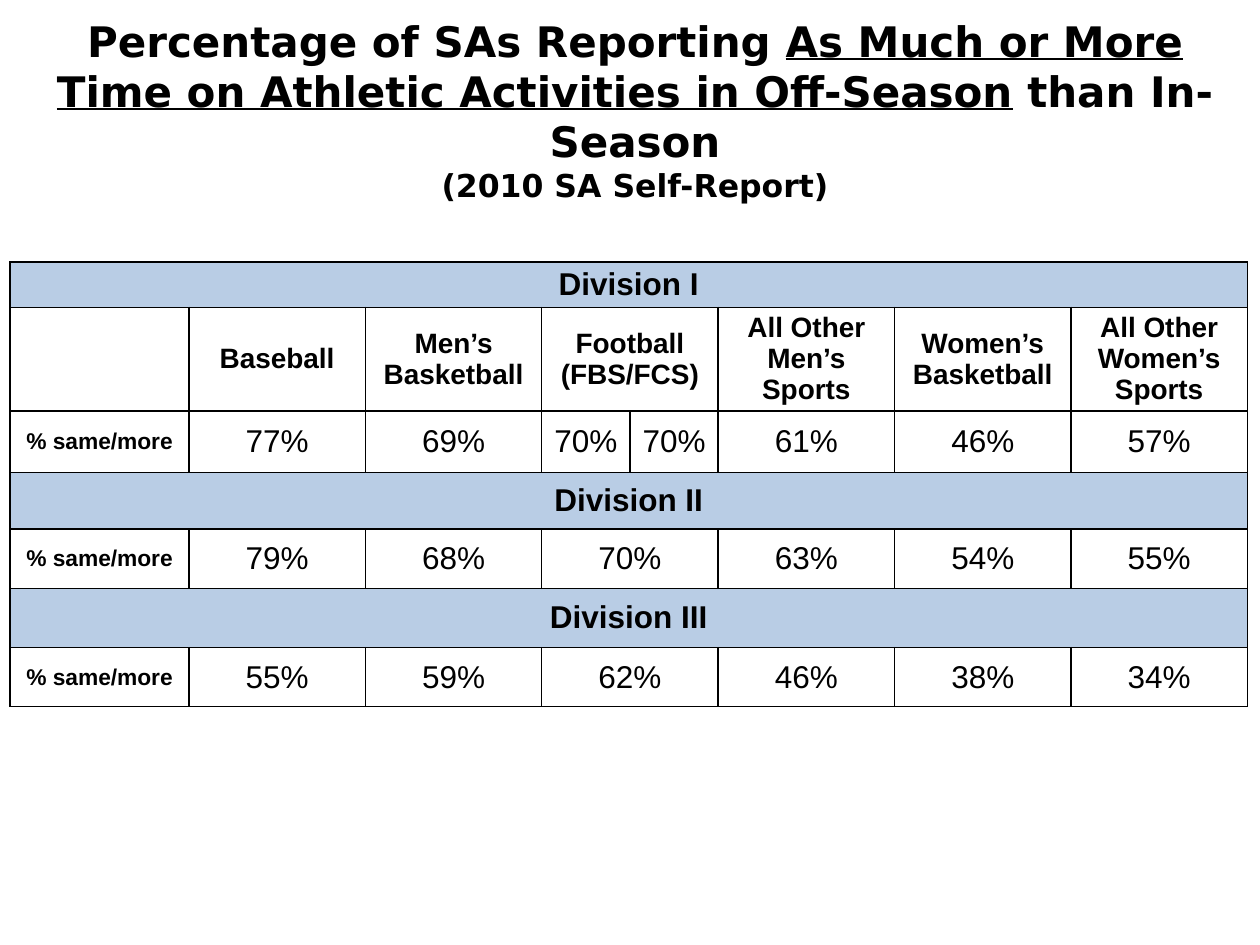
"""Build a slide with a table of off-season time shares by division and sport."""
from lxml.etree import SubElement as Sub
from pptx import Presentation
from pptx.dml.color import RGBColor as RGB
from pptx.enum.text import MSO_ANCHOR as Anchor, MSO_AUTO_SIZE as Auto, PP_ALIGN as Align
from pptx.oxml.ns import qn
from pptx.util import Inches, Pt

COLORS = {"ink": "000000", "band": "B9CDE5", "paper": "FFFFFF"}
WIDTHS = [1.42, 1.4, 1.4, 0.7, 0.7, 1.4, 1.4, 1.4]
HEIGHTS = [0.28, 0.82, 0.49, 0.45, 0.47, 0.47, 0.47]
SPORTS = ["", "Baseball", "Men’s Basketball", "Football\n(FBS/FCS)", None,
          "All Other Men’s Sports", "Women’s Basketball", "All Other Women’s Sports"]
LABEL = "% same/more"
SHARES = {
    "Division I": ["77%", "69%", "70%", "70%", "61%", "46%", "57%"],
    "Division II": ["79%", "68%", "70%", None, "63%", "54%", "55%"],
    "Division III": ["55%", "59%", "62%", None, "46%", "38%", "34%"],
}


def write(para, text, font="Arial", size=18, bold=True, line=False):
    para.alignment = Align.CENTER
    run = para.add_run()
    run.text = text
    face = run.font
    face.name, face.size = font, Pt(size)
    face.bold, face.underline = bold, line
    face.color.rgb = RGB.from_string(COLORS["ink"])


class Deck:
    def __init__(self):
        self.prs = Presentation()
        self.prs.slide_width, self.prs.slide_height = Inches(10), Inches(7.5)
        self.slide = self.prs.slides.add_slide(self.prs.slide_layouts[6])

    def title(self, parts, note, box):
        frame = self.slide.shapes.add_textbox(*map(Inches, box)).text_frame
        frame.word_wrap, frame.auto_size = True, Auto.NONE
        frame.vertical_anchor = Anchor.MIDDLE
        para = frame.paragraphs[0]
        for text, line in parts:
            write(para, text, font="DejaVu Sans", size=24, line=line)
        para.add_line_break()
        write(para, note, font="DejaVu Sans")

    def edge(self, cell):
        props = cell._tc.get_or_add_tcPr()
        for spot, side in enumerate(("lnL", "lnR", "lnT", "lnB")):
            line = Sub(props, qn(f"a:{side}"), w=str(Pt(1)))
            fill = Sub(line, qn("a:solidFill"))
            Sub(fill, qn("a:srgbClr"), val=COLORS["ink"])
            props.insert(spot, line)

    def cell(self, cell, text, fill="paper", **style):
        cell.vertical_anchor = Anchor.MIDDLE
        cell.margin_top = cell.margin_bottom = Inches(0.04)
        cell.fill.solid()
        cell.fill.fore_color.rgb = RGB.from_string(COLORS[fill])
        self.edge(cell)
        for i, part in enumerate((text or "").split("\n")):
            frame = cell.text_frame
            para = frame.add_paragraph() if i else frame.paragraphs[0]
            if part:
                write(para, part, **style)

    def table(self, left, top):
        size = (left, top, sum(WIDTHS), sum(HEIGHTS))
        grid = self.slide.shapes.add_table(
            len(HEIGHTS), len(WIDTHS), *map(Inches, size)).table
        grid.first_row = grid.horz_banding = False
        for col, width in zip(grid.columns, WIDTHS):
            col.width = Inches(width)
        for row, height in zip(grid.rows, HEIGHTS):
            row.height = Inches(height)
        rows = []
        for name, shares in SHARES.items():
            rows.append(([name] + [None] * 7, "band"))
            if len(rows) == 1:
                rows.append((SPORTS, "head"))
            rows.append(([LABEL] + shares, "data"))
        for r, (texts, kind) in enumerate(rows):
            for c, text in enumerate(texts):
                if kind == "band":
                    style = {"fill": "band"}
                elif kind == "head":
                    style = {"size": 16}
                else:
                    style = {"size": 18, "bold": False} if c else {"size": 13}
                self.cell(grid.cell(r, c), text, **style)
            if kind == "band":
                grid.cell(r, 0).merge(grid.cell(r, 7))
            elif texts[4] is None:
                grid.cell(r, 3).merge(grid.cell(r, 4))


def main():
    deck = Deck()
    deck.title([("Percentage of SAs Reporting ", False),
                ("As Much or More Time on Athletic Activities in Off-Season", True),
                (" than In-Season", False)],
               "(2010 SA Self-Report)", (0.08, 0.58, 9.92, 0.58))
    deck.table(0.08, 2.08)
    deck.prs.save("out.pptx")


if __name__ == "__main__":
    main()
